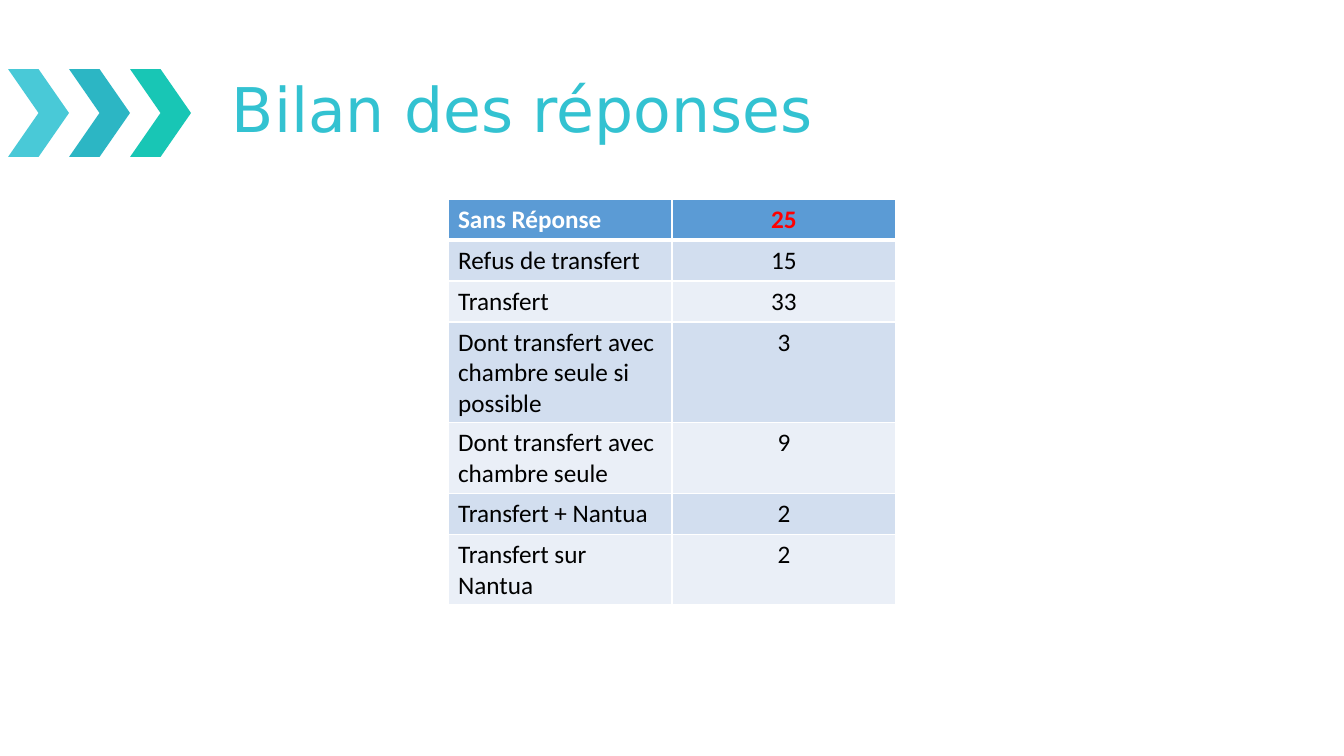
from lxml import etree
from pptx import Presentation, util as u
from pptx.dml.color import RGBColor
from pptx.enum import shapes, text
from pptx.oxml.ns import qn

EMU_PER_PX = 914400 / 100.8
TITLE, BODY = "DejaVu Sans", "Calibri"
WHITE, BLACK, RED, TEAL = "FFFFFF", "000000", "FF0000", "33C2D1"
HEADER, BANDS = "5B9BD5", ("EAEFF7", "D2DEEF")
CHEVRONS = ("49C9D7", "2CB6C4", "18C6B5")
ANSWERS = (
    ("Sans Réponse", "25"),
    ("Refus de transfert", "15"),
    ("Transfert", "33"),
    ("Dont transfert avec chambre seule si possible", "3"),
    ("Dont transfert avec chambre seule", "9"),
    ("Transfert + Nantua", "2"),
    ("Transfert sur Nantua", "2"),
)


def px(*lengths):
    return [u.Emu(round(length * EMU_PER_PX)) for length in lengths]


def rgb(colour):
    return RGBColor.from_string(colour)


class SlideBuilder:
    """Draws the elements of one slide in a shared style."""

    def __init__(self, deck):
        self.slide = deck.slides.add_slide(deck.slide_layouts[6])

    def style(self, paragraph, size, colour, font, bold=False):
        paragraph.font.size = u.Pt(size)
        paragraph.font.name = font
        paragraph.font.bold = bold
        paragraph.font.color.rgb = rgb(colour)

    def chevron(self, x, y, w, h, colour):
        arrow = self.slide.shapes.add_shape(shapes.MSO_SHAPE.CHEVRON, *px(x, y, w, h))
        arrow.shadow.inherit = False
        arrow.fill.solid()
        arrow.fill.fore_color.rgb = rgb(colour)
        arrow.line.fill.background()

    def title(self, x, y, w, h, words):
        frame = self.slide.shapes.add_textbox(*px(x, y, w, h)).text_frame
        frame.word_wrap = True
        frame.vertical_anchor = text.MSO_ANCHOR.MIDDLE
        heading = frame.paragraphs[0]
        heading.text = words
        heading.line_spacing = 0.9
        self.style(heading, 44, TEAL, TITLE)

    def borders(self, cell, top, bottom):
        properties = cell._tc.get_or_add_tcPr()
        for side, points in (("L", 1), ("R", 1), ("T", top), ("B", bottom)):
            line = etree.SubElement(properties, qn(f"a:ln{side}"), w=str(u.Pt(points)))
            fill = etree.SubElement(line, qn("a:solidFill"))
            etree.SubElement(fill, qn("a:srgbClr"), val=WHITE)

    def table(self, x, y, w, row_height, rows):
        frame = self.slide.shapes.add_table(
            len(rows), len(rows[0]), *px(x, y, w, row_height * len(rows)))
        for r, row in enumerate(rows):
            for c, words in enumerate(row):
                cell = frame.table.cell(r, c)
                self.borders(cell, 3 if r == 1 else 1, 3 if r == 0 else 1)
                cell.fill.solid()
                cell.fill.fore_color.rgb = rgb(BANDS[r % 2] if r else HEADER)
                cell.text = words
                entry = cell.text_frame.paragraphs[0]
                entry.alignment = text.PP_ALIGN.CENTER if c else text.PP_ALIGN.LEFT
                colour = BLACK if r else (WHITE, RED)[c]
                self.style(entry, 18, colour, BODY, bold=r == 0)


def main():
    deck = Presentation()
    deck.slide_width, deck.slide_height = px(1344, 756)
    summary = SlideBuilder(deck)
    for i, colour in enumerate(CHEVRONS):
        summary.chevron(8 + 61 * i, 69, 61, 88, colour)
    summary.title(222, 40, 1095, 146, "Bilan des réponses")
    summary.table(448, 199, 448, 41, ANSWERS)
    deck.save("out.pptx")


if __name__ == "__main__":
    main()
